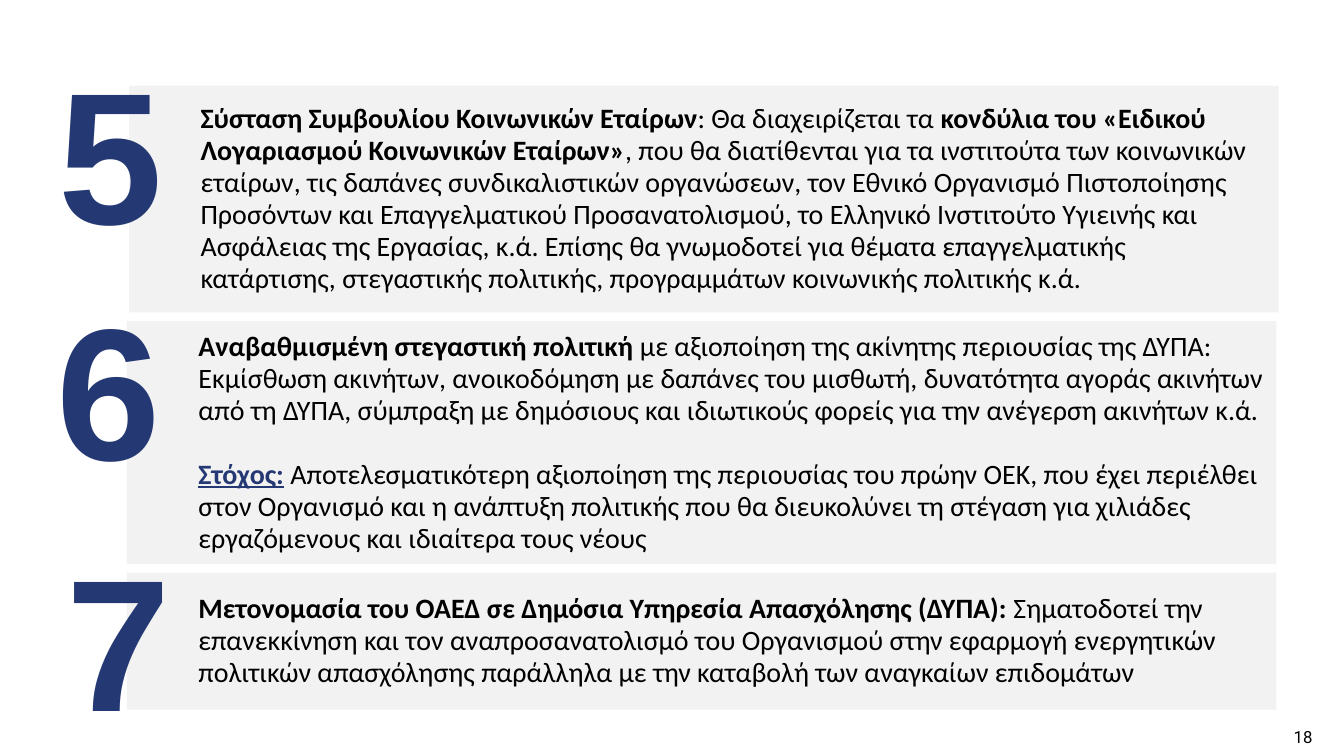
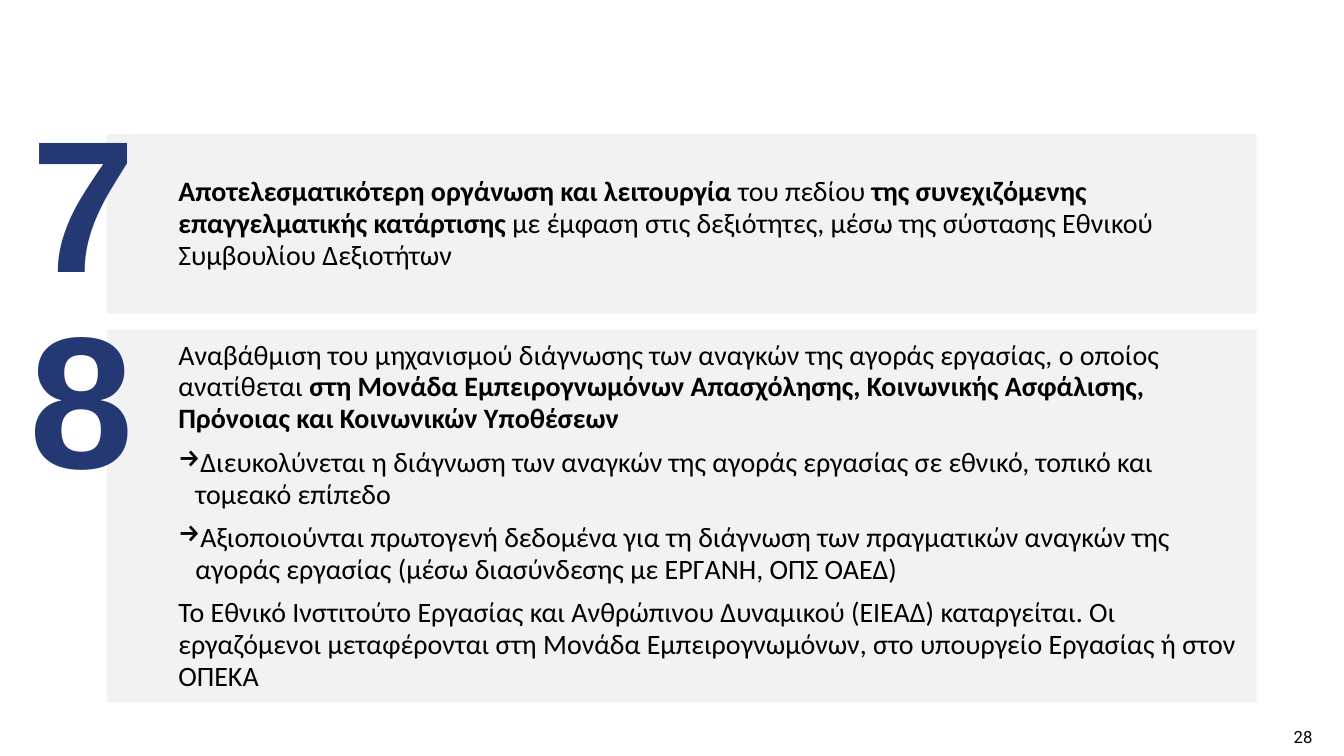
from lxml.etree import SubElement
from pptx import Presentation
from pptx.dml.color import RGBColor
from pptx.enum.shapes import MSO_SHAPE as Shape
from pptx.enum.text import MSO_ANCHOR as Anchor, MSO_AUTO_SIZE as AutoSize, PP_ALIGN as Align
from pptx.oxml.ns import qn
from pptx.util import Pt

NAVY = RGBColor(0x24, 0x38, 0x73)
BLACK = RGBColor(0, 0, 0)
PALE = RGBColor(0xF2, 0xF2, 0xF2)

# Paragraph kinds: space after, in points, and whether an arrow leads
PLAIN = (8, False)
LEAD = (23, False)
ARROW = (8, True)

# Run kinds: colour, bold, underlined
NORMAL = (BLACK, False, False)
BOLD = (BLACK, True, False)
GOAL = (NAVY, True, True)


class Composer:
    """Holds the style and the slide being filled."""

    body_font, number_font, page_font = "Calibri", "Arial", "Roboto"
    panel_width = 821.5
    panel_insets = (51.1, 5.8, 8.6, 5.8)
    number_width, number_height, number_rise = 76, 140.4, 12

    def __init__(self):
        self.deck = Presentation()
        self.deck.slide_width, self.deck.slide_height = Pt(960.48), Pt(540)
        self.page = None

    def new_page(self, label):
        self.page = self.deck.slides.add_slide(self.deck.slide_layouts[6])
        box = self.text_box(919.4, 514.8, 23.8, 22.3, (4.3,) * 4)
        box.text_frame.word_wrap = False
        para = box.text_frame.paragraphs[0]
        para.alignment = Align.CENTER
        self.span(para, label, self.page_font, 12, NORMAL)

    def text_box(self, left, top, width, height, insets):
        box = self.page.shapes.add_textbox(Pt(left), Pt(top), Pt(width), Pt(height))
        box.text_frame.auto_size = AutoSize.SHAPE_TO_FIT_TEXT
        self.set_insets(box.text_frame, insets)
        return box

    def set_insets(self, frame, insets):
        frame.word_wrap = True
        (frame.margin_left, frame.margin_top,
         frame.margin_right, frame.margin_bottom) = map(Pt, insets)

    def span(self, para, text, font, size, kind):
        run = para.add_run()
        run.text = text
        run.font.name, run.font.size = font, Pt(size)
        run.font.color.rgb, run.font.bold, run.font.underline = kind

    def arrow_bullet(self, para):
        props = para._p.get_or_add_pPr()
        props.set("marL", str(Pt(12.24)))
        props.set("indent", str(Pt(-27.36)))
        colour = SubElement(props, qn("a:buClr"))
        SubElement(colour, qn("a:srgbClr"), val=str(BLACK))
        SubElement(props, qn("a:buChar"), char="→")

    def panel(self, left, top, height, paragraphs):
        box = self.page.shapes.add_shape(
            Shape.RECTANGLE, Pt(left), Pt(top), Pt(self.panel_width), Pt(height))
        box.shadow.inherit = False
        box.fill.solid()
        box.fill.fore_color.rgb = PALE
        box.line.fill.background()
        frame = box.text_frame
        self.set_insets(frame, self.panel_insets)
        frame.vertical_anchor = Anchor.MIDDLE
        for index, ((space_after, has_arrow), *runs) in enumerate(paragraphs):
            para = frame.add_paragraph() if index else frame.paragraphs[0]
            if has_arrow:
                self.arrow_bullet(para)
            para.alignment = Align.LEFT
            para.line_spacing = 0.95
            para.space_after = Pt(space_after)
            for text, kind in runs:
                self.span(para, text, self.body_font, 20, kind)

    def number(self, digit, centre, panel_top):
        box = self.text_box(centre - self.number_width / 2, panel_top - self.number_rise,
                            self.number_width, self.number_height, (0,) * 4)
        box.text_frame.vertical_anchor = Anchor.MIDDLE
        para = box.text_frame.paragraphs[0]
        para.alignment = Align.CENTER
        para.line_spacing = 0.85
        para.space_after = Pt(6)
        self.span(para, digit, self.number_font, 134, (NAVY, True, False))

    def stack(self, top, gap, items):
        """Place numbered panels one below another."""
        for digit, centre, left, height, paragraphs in items:
            self.panel(left, top, height, paragraphs)
            self.number(digit, centre, top)
            top += height + gap


# Texts of the first page
COUNCIL = [
    (PLAIN,
     ("Σύσταση Συμβουλίου Κοινωνικών Εταίρων", BOLD),
     (": Θα διαχειρίζεται τα ", NORMAL),
     ("κονδύλια του «Ειδικού Λογαριασμού Κοινωνικών Εταίρων»", BOLD),
     (", που θα διατίθενται για τα ινστιτούτα των κοινωνικών εταίρων, τις δαπάνες "
      "συνδικαλιστικών οργανώσεων, τον Εθνικό Οργανισμό Πιστοποίησης Προσόντων και "
      "Επαγγελματικού Προσανατολισμού, το Ελληνικό Ινστιτούτο Υγιεινής και Ασφάλειας "
      "της Εργασίας, κ.ά. Επίσης θα γνωμοδοτεί για θέματα επαγγελματικής κατάρτισης, "
      "στεγαστικής πολιτικής, προγραμμάτων κοινωνικής πολιτικής κ.ά.", NORMAL)),
]
HOUSING = [
    (LEAD,
     ("Αναβαθμισμένη στεγαστική πολιτική", BOLD),
     (" με αξιοποίηση της ακίνητης περιουσίας της ΔΥΠΑ: Εκμίσθωση ακινήτων, "
      "ανοικοδόμηση με δαπάνες του μισθωτή, δυνατότητα αγοράς ακινήτων από τη ΔΥΠΑ, "
      "σύμπραξη με δημόσιους και ιδιωτικούς φορείς για την ανέγερση ακινήτων κ.ά.", NORMAL)),
    (PLAIN,
     ("Στόχος:", GOAL),
     (" Αποτελεσματικότερη αξιοποίηση της περιουσίας του πρώην ΟΕΚ, που έχει περιέλθει "
      "στον Οργανισμό και η ανάπτυξη πολιτικής που θα διευκολύνει τη στέγαση για χιλιάδες "
      "εργαζόμενους και ιδιαίτερα τους νέους", NORMAL)),
]
RENAMING = [
    (PLAIN,
     ("Μετονομασία του ΟΑΕΔ σε Δημόσια Υπηρεσία Απασχόλησης (ΔΥΠΑ): ", BOLD),
     ("Σηματοδοτεί την επανεκκίνηση και τον αναπροσανατολισμό του Οργανισμού στην εφαρμογή "
      "ενεργητικών πολιτικών απασχόλησης παράλληλα με την καταβολή των αναγκαίων "
      "επιδομάτων", NORMAL)),
]

# Texts of the second page
TRAINING = [
    (PLAIN,
     ("Αποτελεσματικότερη οργάνωση και λειτουργία ", BOLD),
     ("του πεδίου ", NORMAL),
     ("της συνεχιζόμενης επαγγελματικής κατάρτισης ", BOLD),
     ("με έμφαση στις δεξιότητες, μέσω της σύστασης Εθνικού Συμβουλίου Δεξιοτήτων", NORMAL)),
]
DIAGNOSIS = [
    (PLAIN,
     ("Αναβάθμιση του μηχανισμού διάγνωσης των αναγκών της αγοράς εργασίας, ο οποίος "
      "ανατίθεται ", NORMAL),
     ("στη Μονάδα Εμπειρογνωμόνων Απασχόλησης, Κοινωνικής Ασφάλισης, Πρόνοιας και "
      "Κοινωνικών Υποθέσεων", BOLD)),
    (ARROW,
     ("Διευκολύνεται η διάγνωση των αναγκών της αγοράς εργασίας σε εθνικό, τοπικό και "
      "τομεακό επίπεδο", NORMAL)),
    (ARROW,
     ("Αξιοποιούνται πρωτογενή δεδομένα για τη διάγνωση των πραγματικών αναγκών της "
      "αγοράς εργασίας (μέσω διασύνδεσης με ΕΡΓΑΝΗ, ΟΠΣ ΟΑΕΔ)", NORMAL)),
    (PLAIN,
     ("Το Εθνικό Ινστιτούτο Εργασίας και Ανθρώπινου Δυναμικού (ΕΙΕΑΔ) καταργείται. Οι "
      "εργαζόμενοι μεταφέρονται στη Μονάδα Εμπειρογνωμόνων, στο υπουργείο Εργασίας ή "
      "στον ΟΠΕΚΑ", NORMAL)),
]


def main():
    composer = Composer()

    # Measures 5 to 7
    composer.new_page("18")
    composer.stack(61.2, 6.2, [
        ("5", 79.2, 92.2, 162, COUNCIL),
        ("6", 77.8, 90.7, 173.5, HOUSING),
        ("7", 85, 90.7, 97.9, RENAMING),
    ])

    # Measures 7 and 8
    composer.new_page("28")
    composer.stack(95.8, 11.4, [
        ("7", 59.8, 76.3, 128.2, TRAINING),
        ("8", 58.7, 76.3, 266.4, DIAGNOSIS),
    ])

    composer.deck.save("out.pptx")


if __name__ == "__main__":
    main()
